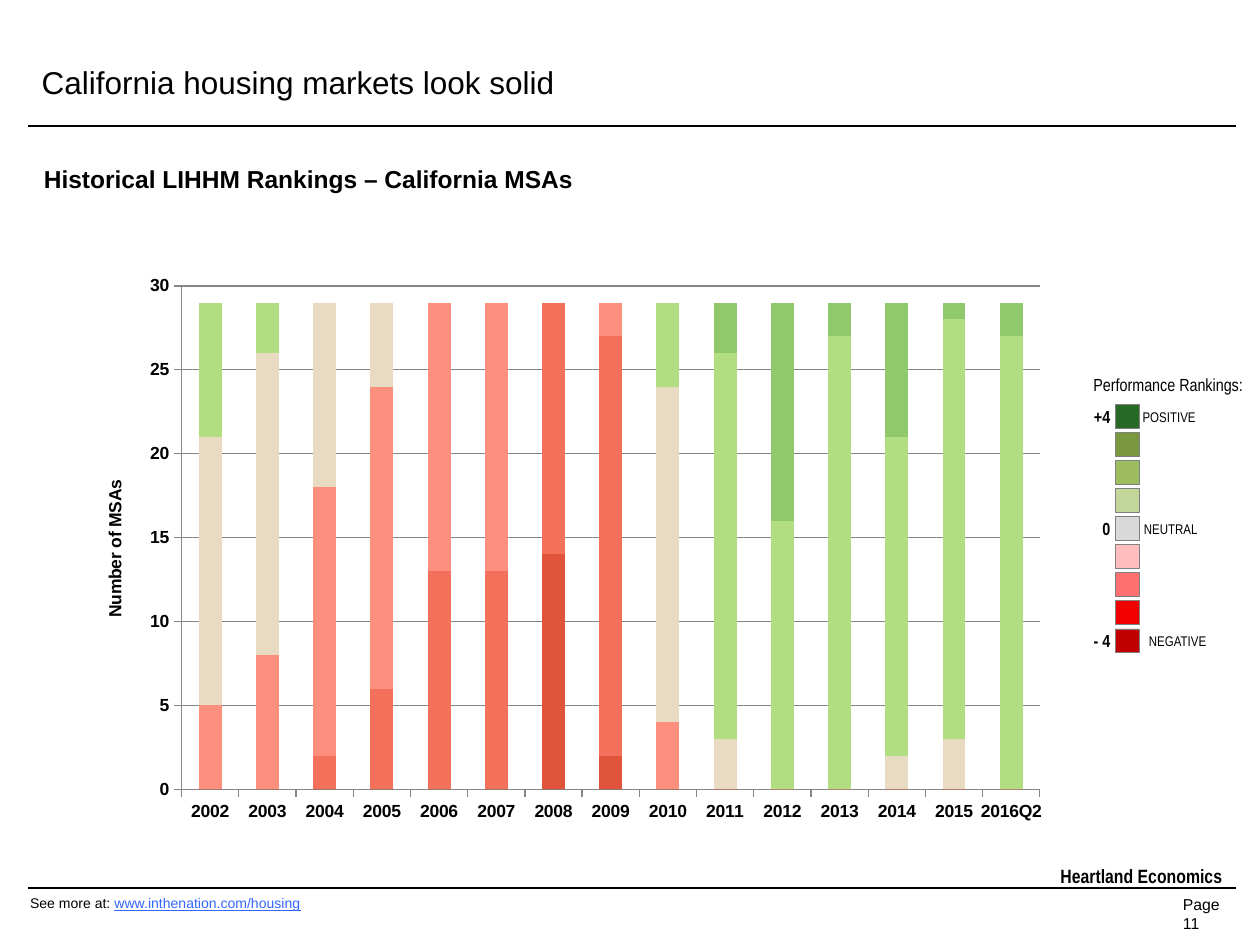
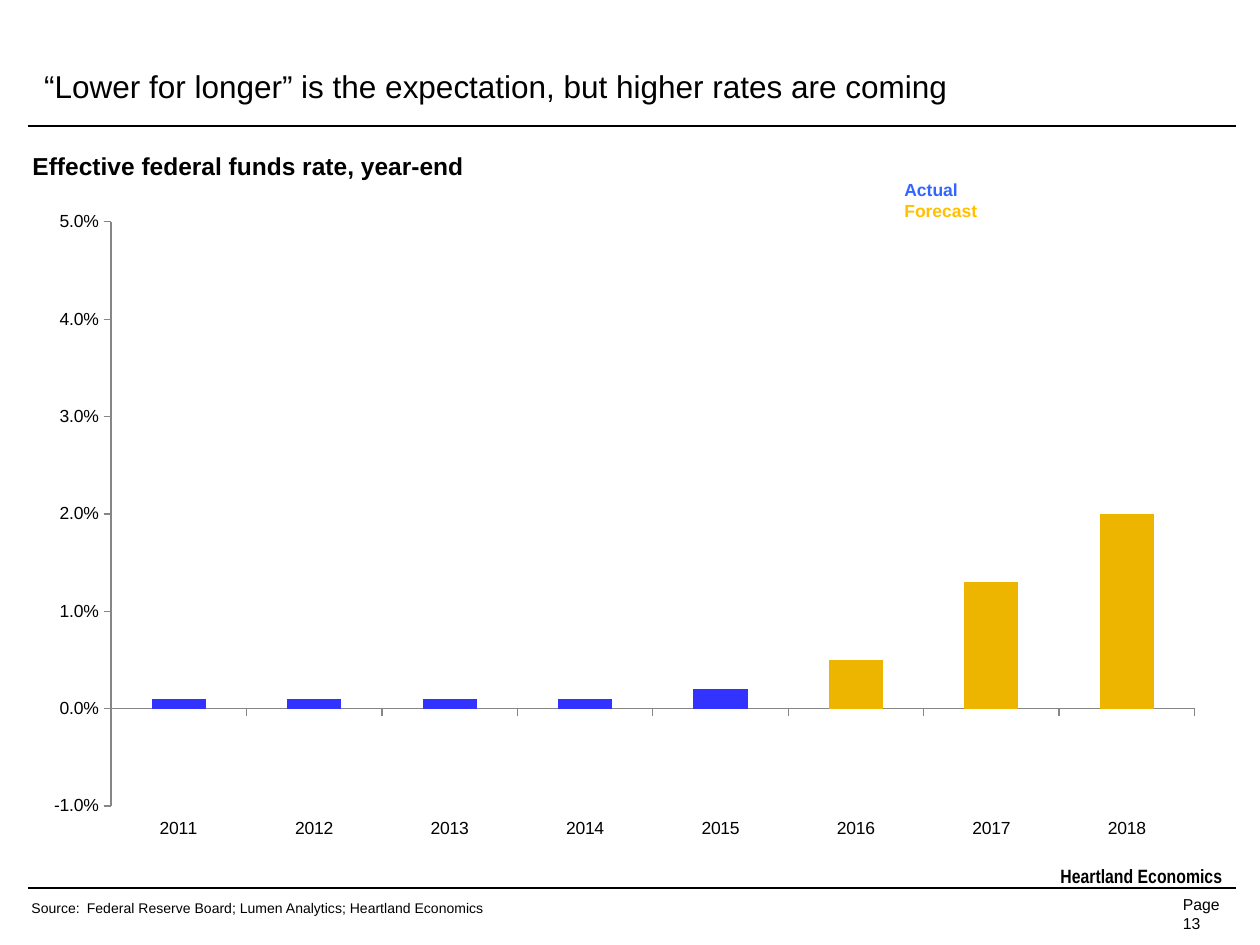
from dataclasses import dataclass
from pptx import Presentation
from pptx.chart.data import CategoryChartData
from pptx.dml.color import RGBColor
from pptx.enum.chart import XL_CHART_TYPE as ChartType
from pptx.enum.chart import XL_TICK_LABEL_POSITION as LabelPosition
from pptx.enum.chart import XL_TICK_MARK as TickMark
from pptx.enum.shapes import MSO_CONNECTOR as Connector
from pptx.enum.shapes import MSO_SHAPE as Shape
from pptx.enum.text import MSO_ANCHOR as Anchor
from pptx.enum.text import MSO_AUTO_SIZE as AutoSize
from pptx.enum.text import PP_ALIGN as Align
from pptx.oxml import parse_xml
from pptx.oxml.ns import nsdecls, qn
from pptx.util import Inches, Pt

BLACK, AXIS_GRAY = "000000", "868686"
ACTUAL_BAR, FORECAST_BAR = "3333FF", "EEB500"
LINK_BLUE, FORECAST_TEXT = "3366FF", "FFC000"
SANS, NARROW = "Arial", "Arial Narrow"
BRAND = "Heartland Economics"


def rgb(code):
    """Turn a hex string into a colour."""
    return RGBColor.from_string(code)


def assign(target, values):
    """Set each attribute of the target from a dict."""
    for name, value in values.items():
        setattr(target, name, value)


def style_font(font, size, color=BLACK, name=SANS, **extra):
    """Give a font its size, colour, typeface and further traits."""
    assign(font, {"size": Pt(size), "name": name, **extra})
    font.color.rgb = rgb(color)


@dataclass
class Deck:
    """Holds the presentation, its style and the current slide."""
    prs: object
    slide: object = None

    def start(self, title, box, page):
        """Open a slide with its title, rules and footer."""
        self.slide = self.prs.slides.add_slide(self.prs.slide_layouts[5])
        heading = self.slide.shapes.title
        places = ("left", "top", "width", "height")
        assign(heading, dict(zip(places, map(Inches, box))))
        frame = heading.text_frame
        frame.text = title
        assign(frame, {"vertical_anchor": Anchor.MIDDLE, "word_wrap": True,
                       "auto_size": AutoSize.NONE})
        paragraph = frame.paragraphs[0]
        paragraph.alignment = Align.LEFT
        style_font(paragraph.runs[0].font, 18)
        for y in (1, 7.05):
            self.rule(0.22, y, 9.81)
        self.text((7.8, 6.81, 2, 0.29), [[(BRAND, {})]], 11, Align.RIGHT,
                  name=NARROW, bold=True)
        self.text((9.29, 7.05, 0.6, 0.4), [[(f"Page {page}", {})]], 9)

    def rule(self, left, y, right):
        """Draw a horizontal rule."""
        line = self.slide.shapes.add_connector(
            Connector.STRAIGHT, *map(Inches, (left, y, right, y)))
        line.line.color.rgb = rgb(BLACK)
        line.line.width = Pt(1)
        line._element.spPr.append(parse_xml(f"<a:effectLst {nsdecls('a')}/>"))

    def text(self, box, lines, size, align=Align.LEFT, tab=None, inset=0.1, **base):
        """Write lines, each a list of runs with their own traits."""
        frame = self.slide.shapes.add_textbox(*map(Inches, box)).text_frame
        assign(frame, {"word_wrap": True, "margin_left": Inches(inset)})
        for index, runs in enumerate(lines):
            paragraph = frame.add_paragraph() if index else frame.paragraphs[0]
            paragraph.alignment = align
            if tab:
                paragraph._p.get_or_add_pPr().append(parse_xml(
                    f'<a:tabLst {nsdecls("a")}>'
                    f'<a:tab pos="{Inches(tab)}" algn="l"/></a:tabLst>'))
            for words, traits in runs:
                run = paragraph.add_run()
                run.text = words
                style_font(run.font, size, **{**base, **traits})

    def swatch(self, left, top, side, color):
        """Draw one square of the ranking scale."""
        square = self.slide.shapes.add_shape(
            Shape.RECTANGLE, *map(Inches, (left, top, side, side)))
        square.shadow.inherit = False
        square.fill.solid()
        square.fill.fore_color.rgb = rgb(color)
        square.line.color.rgb = rgb("808080")
        square.line.width = Pt(0.25)

    def columns(self, kind, box, layout, categories, series, colors, scale, bold=False):
        """Add a column chart with a fixed plot area and return it."""
        data = CategoryChartData()
        data.categories = categories
        for number, values in enumerate(series, 1):
            data.add_series(f"Series {number}", values)
        chart = self.slide.shapes.add_chart(kind, *map(Inches, box), data).chart
        assign(chart, {"has_legend": False, "has_title": False})
        style_font(chart.font, 10, bold=bold)
        plot = chart.plots[0]
        assign(plot, {"gap_width": 150, "vary_by_categories": False})
        for bars, color in zip(plot.series, colors):
            bars.invert_if_negative = False
            bars.format.fill.solid()
            bars.format.fill.fore_color.rgb = rgb(color)
        for axis in (chart.category_axis, chart.value_axis):
            assign(axis, {"major_tick_mark": TickMark.OUTSIDE,
                          "minor_tick_mark": TickMark.NONE,
                          "has_major_gridlines": False})
            axis.format.line.color.rgb = rgb(AXIS_GRAY)
            style_font(axis.tick_labels.font, 10, bold=bold)
        assign(chart.value_axis, scale)
        self.fix_plot(chart, layout)
        return chart

    def fix_plot(self, chart, layout):
        """Place the inner plot area by fractions of the chart."""
        area = chart._chartSpace.chart.plotArea
        for old in area.findall(qn("c:layout")):
            area.remove(old)
        parts = "".join(f'<c:{key} val="{value}"/>'
                        for key, value in zip("xywh", layout))
        area.insert(0, parse_xml(
            f'<c:layout {nsdecls("c")}><c:manualLayout>'
            '<c:layoutTarget val="inner"/><c:xMode val="edge"/>'
            f'<c:yMode val="edge"/>{parts}</c:manualLayout></c:layout>'))


def california(deck):
    """Build the slide of California rankings."""
    deck.start("California housing markets look solid", (0.23, 0.3, 8.86, 0.7), 11)
    deck.text((0.25, 1.25, 5.33, 0.34),
              [[("Historical LIHHM Rankings – California MSAs", {})]], 14, bold=True)
    deck.text((0.14, 7.05, 9.1, 0.37),
              [[("See more at: ", {}),
                ("www.inthenation.com/housing",
                 {"color": LINK_BLUE, "underline": True})]], 8)

    years = [str(year) for year in range(2002, 2016)] + ["2016Q2"]
    unused = [0] * len(years)
    rankings = [
        unused,
        [0, 0, 0, 0, 0, 0, 14, 2, 0, 0, 0, 0, 0, 0, 0],
        [0, 0, 2, 6, 13, 13, 15, 25, 0, 0, 0, 0, 0, 0, 0],
        [5, 8, 16, 18, 16, 16, 0, 2, 4, 0, 0, 0, 0, 0, 0],
        [16, 18, 11, 5, 0, 0, 0, 0, 20, 3, 0, 0, 2, 3, 0],
        [8, 3, 0, 0, 0, 0, 0, 0, 5, 23, 16, 27, 19, 25, 27],
        [0, 0, 0, 0, 0, 0, 0, 0, 0, 3, 13, 2, 8, 1, 2],
        unused,
        unused,
    ]
    ranking_colors = ["CC321C", "E0543C", "F3715B", "FD8F7E", "E9DBC1",
                      "B1DE81", "8FC96C", "73B260", "5C9C3D"]
    chart = deck.columns(
        ChartType.COLUMN_STACKED, (0.58, 2.09, 7.83, 4.49), (0.11, 0.04, 0.87, 0.89),
        years, rankings, ranking_colors,
        {"minimum_scale": 0, "maximum_scale": 30, "major_unit": 5,
         "has_major_gridlines": True}, bold=True)
    chart.plots[0].overlap = 100
    counts = chart.value_axis
    counts.major_gridlines.format.line.color.rgb = rgb(AXIS_GRAY)
    counts.axis_title.text_frame.text = "Number of MSAs"
    caption = counts.axis_title.text_frame.paragraphs[0].runs[0]
    style_font(caption.font, 10, bold=True)

    deck.text((8.58, 2.92, 1.4, 0.27), [[("Performance Rankings:", {})]], 10,
              name=NARROW)
    scale_colors = ["266A26", "7A983E", "9EBD5F", "C2D69A", "D9D9D9",
                    "FFBDBD", "FF7171", "F20000", "C00000"]
    marks = {0: ("+4", "POSITIVE", 8.97), 4: ("0", "NEUTRAL", 8.98),
             8: ("- 4", "NEGATIVE", 9.02)}
    first, last = 3.21, 4.99
    pitch = (last - first) / (len(scale_colors) - 1)
    for step, color in enumerate(scale_colors):
        top = first + step * pitch
        deck.swatch(8.85, top, 0.19, color)
        if step in marks:
            score, meaning, left = marks[step]
            deck.text((8.4, top - 0.04, 0.51, 0.27), [[(score, {})]], 10,
                      Align.RIGHT, name=NARROW, bold=True)
            deck.text((left, top - 0.02, 0.8, 0.24), [[(meaning, {})]], 8,
                      name=NARROW)


def fed_funds(deck):
    """Build the slide of federal funds rates."""
    deck.start("“Lower for longer” is the expectation, but higher rates are coming",
               (0.25, 0.37, 9.58, 0.62), 13)
    deck.text((0.25, 7.09, 6.33, 0.24),
              [[(f"Source:\tFederal Reserve Board; Lumen Analytics; {BRAND}", {})]],
              8, tab=0.44, inset=0)
    deck.text((0.16, 1.15, 8.53, 0.34),
              [[("Effective federal funds rate, year-end", {})]], 14, bold=True)

    years = [str(year) for year in range(2011, 2019)]
    rates = [0.001, 0.001, 0.001, 0.001, 0.002, 0.005, 0.013, 0.02]
    chart = deck.columns(
        ChartType.COLUMN_CLUSTERED, (0.25, 1.58, 9.42, 5.18),
        (0.067, 0.035, 0.913, 0.895), years, [rates], [ACTUAL_BAR],
        {"minimum_scale": -0.01, "maximum_scale": 0.05, "major_unit": 0.01})
    chart.category_axis.tick_label_position = LabelPosition.LOW
    assign(chart.value_axis.tick_labels,
           {"number_format": "0.0%", "number_format_is_linked": False})
    bars = chart.plots[0].series[0]
    for index in range(years.index("2016"), len(years)):
        fill = bars.points[index].format.fill
        fill.solid()
        fill.fore_color.rgb = rgb(FORECAST_BAR)

    deck.text((7.08, 1.37, 2.33, 0.44),
              [[("Actual", {"color": LINK_BLUE})],
               [("Forecast", {"color": FORECAST_TEXT})]], 10, bold=True)


def main():
    """Build and save the deck."""
    prs = Presentation()
    assign(prs, {"slide_width": Inches(10), "slide_height": Inches(7.5)})
    deck = Deck(prs)
    california(deck)
    fed_funds(deck)
    prs.save("out.pptx")


if __name__ == "__main__":
    main()
